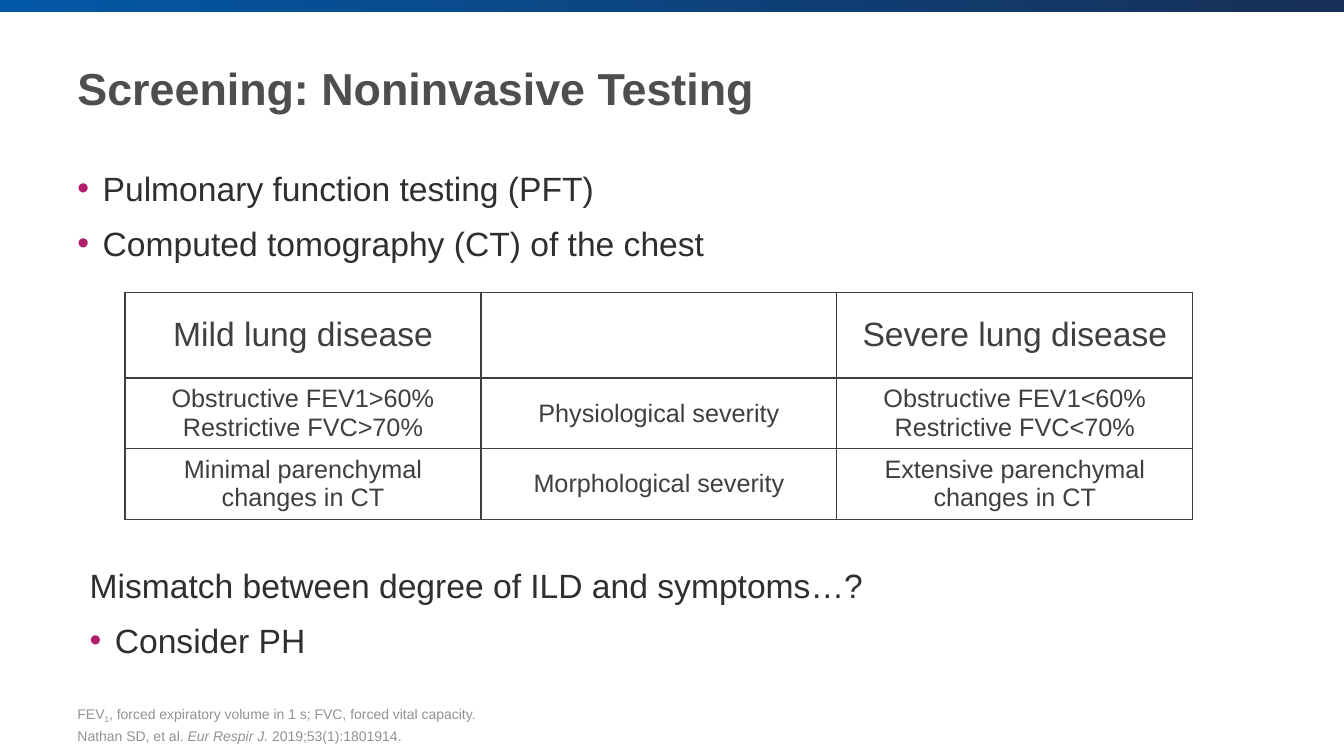
"""Build the slide on noninvasive screening tests."""
from dataclasses import dataclass

from lxml import etree
from pptx import Presentation
from pptx.dml.color import RGBColor
from pptx.enum.shapes import MSO_SHAPE
from pptx.enum.text import MSO_ANCHOR, PP_ALIGN
from pptx.oxml.ns import qn
from pptx.util import Inches, Pt

RECT = MSO_SHAPE.RECTANGLE
TOP, MID, LOW = MSO_ANCHOR.TOP, MSO_ANCHOR.MIDDLE, MSO_ANCHOR.BOTTOM
LEFT, CENTER = PP_ALIGN.LEFT, PP_ALIGN.CENTER
DARK, GRAY, PINK = "2F2F2F", "3F3F3F", "B21E6C"


@dataclass
class Run:
    text: str
    italic: bool = False
    base: int = 0


@dataclass
class Para:
    runs: list[Run]
    bullet: bool = False


@dataclass
class Style:
    size: int
    color: str
    bold: bool = False
    align: int = LEFT
    gap: int = 0


@dataclass
class Box:
    area: tuple[float, float, float, float]
    paras: list[Para]
    style: Style
    anchor: int = TOP


def line(text: str, bullet: bool = False) -> Para:
    return Para([Run(text)], bullet)


def paint(hue: str) -> RGBColor:
    return RGBColor.from_string(hue)


def apply(item, values: dict) -> None:
    for name, value in values.items():
        setattr(item, name, value)


def add_bullet(para) -> None:
    props = para._p.get_or_add_pPr()
    apply_xml(props, {"marL": Inches(0.25), "indent": Inches(-0.25)})
    tint = etree.SubElement(props, qn("a:buClr"))
    etree.SubElement(tint, qn("a:srgbClr"), val=PINK)
    etree.SubElement(props, qn("a:buFont"), typeface="Arial")
    etree.SubElement(props, qn("a:buChar"), char="•")


def apply_xml(node, values: dict) -> None:
    for name, value in values.items():
        node.set(name, str(int(value)))


def write(frame, paras: list[Para], style: Style) -> None:
    for pos, item in enumerate(paras):
        para = frame.add_paragraph() if pos else frame.paragraphs[0]
        if item.bullet:
            add_bullet(para)
        apply(para, {"alignment": style.align,
                     "space_before": Pt(style.gap if pos else 0)})
        for part in item.runs:
            run = para.add_run()
            run.text = part.text
            apply(run.font, {"name": "Arial", "size": Pt(style.size),
                             "bold": style.bold, "italic": part.italic})
            run.font.color.rgb = paint(style.color)
            if part.base:
                apply_xml(run._r.get_or_add_rPr(), {"baseline": part.base})


def add_box(slide, box: Box) -> None:
    frame = slide.shapes.add_textbox(*map(Inches, box.area)).text_frame
    apply(frame, {"word_wrap": True, "vertical_anchor": box.anchor})
    write(frame, box.paras, box.style)


def add_bar(slide) -> None:
    bar = slide.shapes.add_shape(RECT, 0, 0, Inches(13.33), Inches(0.12))
    bar.shadow.inherit = False
    bar.line.fill.background()
    bar.fill.gradient()
    bar.fill.gradient_angle = 0
    for stop, hue, spot in zip(bar.fill.gradient_stops,
                               ("0258A6", "173057"), (0, 0.99)):
        stop.color.rgb = paint(hue)
        stop.position = spot


def add_rim(cell) -> None:
    props = cell._tc.get_or_add_tcPr()
    for side in "LRTB":
        edge = etree.SubElement(props, qn(f"a:ln{side}"), w=str(Pt(1)))
        fill = etree.SubElement(edge, qn("a:solidFill"))
        etree.SubElement(fill, qn("a:srgbClr"), val=GRAY)


def add_grid(slide, rows: list[list[list[str]]]) -> None:
    area = map(Inches, (1.24, 2.9, 10.6, 2.25))
    grid = slide.shapes.add_table(len(rows), len(rows[0]), *area).table
    apply(grid, {"first_row": False, "horz_banding": False})
    for col in grid.columns:
        col.width = Inches(3.53)
    for pos, (row, texts) in enumerate(zip(grid.rows, rows)):
        row.height = Inches(0.7 if pos else 0.85)
        style = Style(18 if pos else 24, GRAY, align=CENTER)
        for cell, lines in zip(row.cells, texts):
            apply(cell, {"vertical_anchor": MID,
                         "margin_left": Inches(0.14),
                         "margin_right": Inches(0.14),
                         "margin_top": Inches(0.07),
                         "margin_bottom": Inches(0.07)})
            add_rim(cell)
            cell.fill.background()
            write(cell.text_frame, [line(text) for text in lines], style)


ROWS = [
    [["Mild lung disease"], [], ["Severe lung disease"]],
    [["Obstructive FEV1>60%", "Restrictive FVC>70%"],
     ["Physiological severity"],
     ["Obstructive FEV1<60%", "Restrictive FVC<70%"]],
    [["Minimal parenchymal changes in CT"],
     ["Morphological severity"],
     ["Extensive parenchymal changes in CT"]],
]
BODY = Style(24, DARK, gap=10)
BOXES = [
    Box((0.67, 0.22, 11.75, 1.3), [line("Screening: Noninvasive Testing")],
        Style(32, "4D4E4D", bold=True), MID),
    Box((0.67, 1.62, 11.75, 1.1),
        [line("Pulmonary function testing (PFT)", True),
         line("Computed tomography (CT) of the chest", True)], BODY),
    Box((0.67, 6.95, 11.75, 0.48),
        [Para([Run("FEV"), Run("1", base=-25000),
               Run(", forced expiratory volume in 1 s; "
                   "FVC, forced vital capacity.")]),
         Para([Run("Nathan SD, et al. "), Run("Eur Respir J. ", italic=True),
               Run("2019;53(1):1801914.")])],
        Style(10, "929292", gap=2), LOW),
    Box((0.79, 5.56, 11.75, 1.06),
        [line("Mismatch between degree of ILD and symptoms…?"),
         line("Consider PH", True)], BODY),
]


def main() -> None:
    deck = Presentation()
    apply(deck, {"slide_width": Inches(13.33), "slide_height": Inches(7.5)})
    slide = deck.slides.add_slide(deck.slide_layouts[6])
    add_bar(slide)
    add_grid(slide, ROWS)
    for box in BOXES:
        add_box(slide, box)
    deck.save("out.pptx")


if __name__ == "__main__":
    main()
